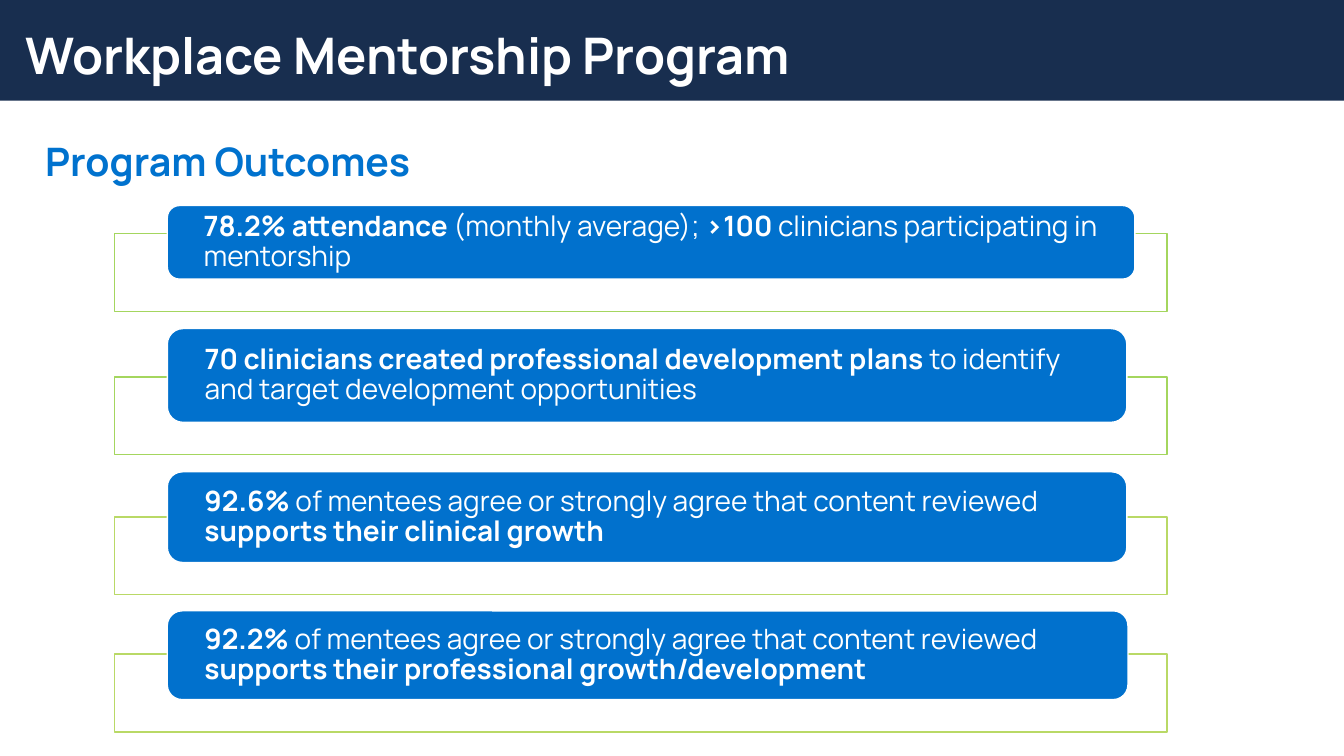
import lxml.etree
import pptx
import pptx.dml.color
import pptx.enum.shapes
import pptx.enum.text
import pptx.oxml.ns
import pptx.util

Pt = pptx.util.Pt
RGBColor = pptx.dml.color.RGBColor
SHAPES = pptx.enum.shapes.MSO_SHAPE
ANCHOR = pptx.enum.text.MSO_ANCHOR

NAVY = RGBColor(0x18, 0x2E, 0x4F)
HEADING_BLUE = RGBColor(0x00, 0x72, 0xCE)
CARD_BLUE = RGBColor(0x01, 0x71, 0xCD)
GREEN = RGBColor(0xA4, 0xD6, 0x5E)
LIME = RGBColor(0xB9, 0xD9, 0x66)
WHITE = RGBColor(0xFF, 0xFF, 0xFF)

SLIDE_WIDTH, SLIDE_HEIGHT = 960, 540
FRAME_HEIGHT = 55.5
CARD_INDENT = 37.5
CARD_OVERLAP = 32.4

OUTCOMES = [
    (167, 691.2, 52.6, GREEN, [
        ("78.2% attendance ", True), ("(monthly average); ", False),
        (">100 ", True), ("clinicians participating in mentorship", False)]),
    (269.3, 685.4, 67, GREEN, [
        ("70 clinicians created professional development plans ", True),
        ("to identify and target development opportunities", False)]),
    (369.4, 685.4, 64.8, LIME, [
        ("92.6% ", True),
        ("of mentees agree or strongly agree that content reviewed ", False),
        ("supports their clinical growth", True)]),
    (467.3, 686.2, 63.4, LIME, [
        ("92.2%", True),
        (" of mentees agree or strongly agree that content reviewed ", False),
        ("supports their professional growth/development", True)]),
]


def write_text(shape, runs, size, color, anchor=ANCHOR.MIDDLE, side=7.2, edge=3.6):
    frame = shape.text_frame
    frame.word_wrap = True
    frame.vertical_anchor = anchor
    frame.margin_left = frame.margin_right = Pt(side)
    frame.margin_top = frame.margin_bottom = Pt(edge)
    paragraph = frame.paragraphs[0]
    paragraph.alignment = pptx.enum.text.PP_ALIGN.LEFT
    paragraph.line_spacing = 0.9
    for text, bold in runs:
        run = paragraph.add_run()
        run.text = text
        run.font.name = "Manrope"
        run.font.size = Pt(size)
        run.font.bold = bold
        run.font.color.rgb = color


def add_box(slide, kind, left, top, width, height, fill, line=None):
    shape = slide.shapes.add_shape(kind, Pt(left), Pt(top), Pt(width), Pt(height))
    shape.shadow.inherit = False
    shape.fill.solid()
    shape.fill.fore_color.rgb = fill
    if line is None:
        shape.line.fill.background()
    else:
        shape.line.color.rgb = line
        shape.line.width = Pt(1)
    return shape


def set_opacity(shape, percent):
    fill = shape.element.spPr.find(pptx.oxml.ns.qn("a:solidFill"))
    alpha = lxml.etree.SubElement(fill[0], pptx.oxml.ns.qn("a:alpha"))
    alpha.set("val", str(percent * 1000))


def add_header(slide, left, top, width, height):
    add_box(slide, SHAPES.RECTANGLE, left, top, width, height, NAVY)
    title = slide.shapes.add_textbox(
        Pt(left + 11.5), Pt(top + 10.8), Pt(828), Pt(height - 10.8))
    write_text(title, [("Workplace Mentorship Program", True)], 36, WHITE)


def add_heading(slide, left, top, width, height):
    heading = slide.shapes.add_textbox(Pt(left), Pt(top), Pt(width), Pt(height))
    write_text(heading, [("Program Outcomes", True)], 28, HEADING_BLUE, anchor=ANCHOR.TOP)


def add_outcome(slide, left, top, width, height, card_width, card_height, line, runs):
    frame = add_box(slide, SHAPES.RECTANGLE, left, top, width, height, WHITE, line)
    set_opacity(frame, 90)
    card = add_box(slide, SHAPES.ROUNDED_RECTANGLE, left + CARD_INDENT,
                   top + CARD_OVERLAP - card_height, card_width, card_height,
                   CARD_BLUE, WHITE)
    write_text(card, runs, 20, WHITE, side=23.4, edge=0)


def main():
    presentation = pptx.Presentation()
    presentation.slide_width = Pt(SLIDE_WIDTH)
    presentation.slide_height = Pt(SLIDE_HEIGHT)
    slide = presentation.slides.add_slide(presentation.slide_layouts[6])
    add_header(slide, 0, 0, SLIDE_WIDTH, 72)
    add_heading(slide, 25.2, 98.6, 866, 389)
    for top, card_width, card_height, line, runs in OUTCOMES:
        add_outcome(slide, 82, top, 751.7, FRAME_HEIGHT,
                    card_width, card_height, line, runs)
    presentation.save("out.pptx")


if __name__ == "__main__":
    main()
